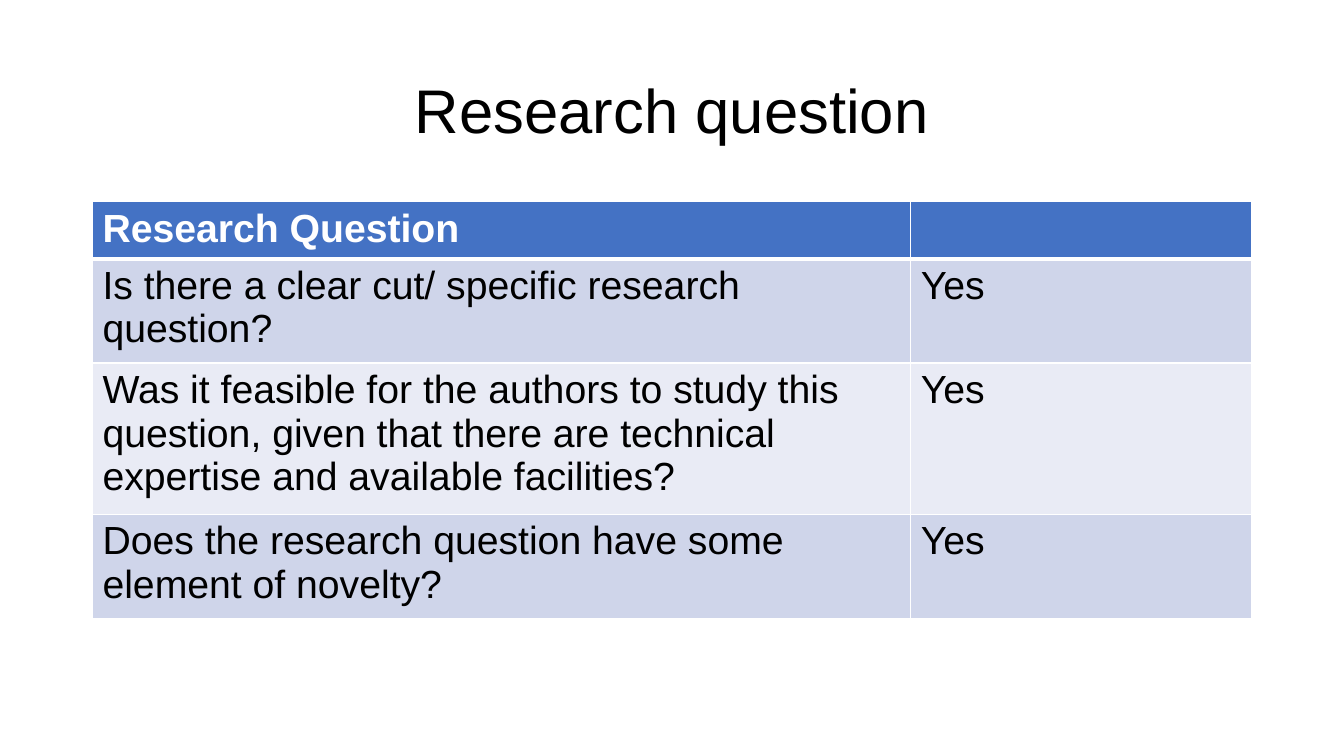
from lxml import etree
from pptx import Presentation
from pptx.dml.color import RGBColor
from pptx.enum.text import MSO_ANCHOR, PP_ALIGN
from pptx.oxml.ns import qn
from pptx.util import Cm, Pt

CENTER, LEFT = PP_ALIGN.CENTER, PP_ALIGN.LEFT
MIDDLE = MSO_ANCHOR.MIDDLE
BLACK = RGBColor(0x00, 0x00, 0x00)
WHITE = RGBColor(0xFF, 0xFF, 0xFF)
BLUE = RGBColor(0x44, 0x72, 0xC4)
BAND_DARK = RGBColor(0xCF, 0xD5, 0xEA)
BAND_LIGHT = RGBColor(0xE9, 0xEB, 0xF5)

COLUMN_WIDTHS = (20.62, 8.59)
ROW_HEIGHTS = (1.35, 2.45, 3.56, 2.45)
ROWS = (
    ("Research Question", ""),
    ("Is there a clear cut/ specific research question?", "Yes"),
    ("Was it feasible for the authors to study this question, given that "
     "there are technical expertise and available facilities?", "Yes"),
    ("Does the research question have some element of novelty?", "Yes"),
)


def write(tf, text, font="Arial", size=28, color=BLACK, bold=False,
          align=LEFT, spacing=1.0):
    p = tf.paragraphs[0]
    p.alignment = align
    p.line_spacing = spacing
    p.font.size = Pt(size)
    if text:
        r = p.add_run()
        r.text = text
        r.font.name = font
        r.font.size = Pt(size)
        r.font.bold = bold
        r.font.color.rgb = color


class SlideBuilder:
    def __init__(self, slide):
        self.s = slide

    def title(self, text, left, top, width, height):
        sp = self.s.shapes.add_textbox(Cm(left), Cm(top), Cm(width), Cm(height))
        tf = sp.text_frame
        tf.word_wrap = True
        tf.vertical_anchor = MIDDLE
        write(tf, text, size=44, align=CENTER, spacing=0.9)

    def borders(self, cell, **widths):
        tc_pr = cell._tc.get_or_add_tcPr()
        for i, (side, width) in enumerate(widths.items()):
            ln = etree.Element(qn(f"a:ln{side}"), w=str(Pt(width)))
            fill = etree.SubElement(ln, qn("a:solidFill"))
            etree.SubElement(fill, qn("a:srgbClr"), val=str(WHITE))
            tc_pr.insert(i, ln)

    def table(self, rows, left, top, widths, heights):
        frame = self.s.shapes.add_table(
            len(rows), len(widths), Cm(left), Cm(top),
            Cm(sum(widths)), Cm(sum(heights)))
        table = frame.table
        for column, width in zip(table.columns, widths):
            column.width = Cm(width)
        for i, (row, height, texts) in enumerate(zip(table.rows, heights, rows)):
            row.height = Cm(height)
            header = i == 0
            band = BAND_DARK if i % 2 else BAND_LIGHT
            for cell, text in zip(row.cells, texts):
                cell.fill.solid()
                cell.fill.fore_color.rgb = BLUE if header else band
                write(cell.text_frame, text, bold=header,
                      color=WHITE if header else BLACK)
                self.borders(cell, L=1, R=1, T=3 if i == 1 else 1,
                             B=3 if header else 1)


def main():
    prs = Presentation()
    prs.slide_width, prs.slide_height = Cm(33.87), Cm(19.05)
    builder = SlideBuilder(prs.slides.add_slide(prs.slide_layouts[6]))
    builder.title("Research question", 2.33, 1.01, 29.21, 3.68)
    builder.table(ROWS, 2.33, 5.08, COLUMN_WIDTHS, ROW_HEIGHTS)
    prs.save("out.pptx")


if __name__ == "__main__":
    main()
